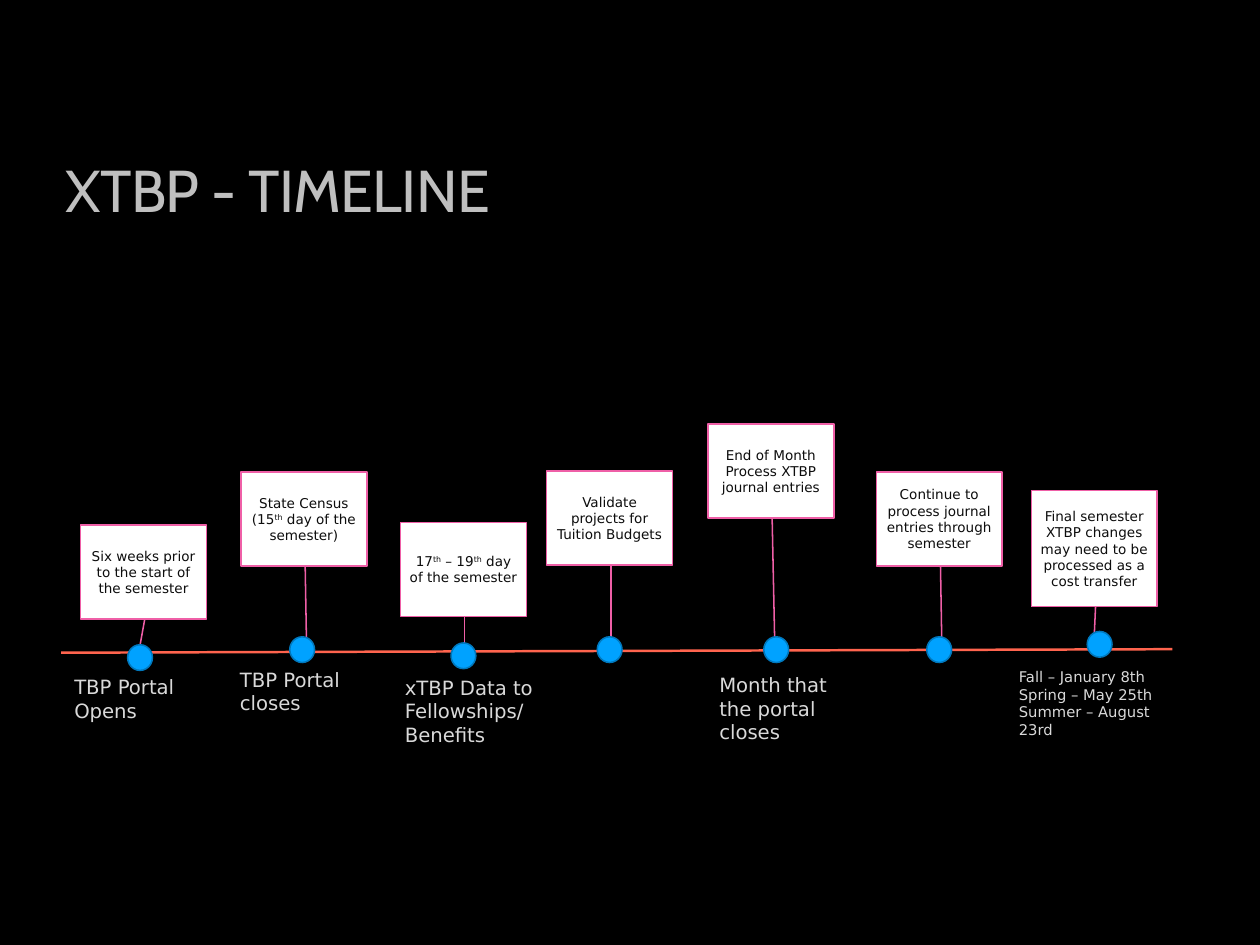
from pptx import Presentation
from pptx import util as u
from pptx.dml.color import RGBColor
from pptx.enum import shapes, text
from pptx.oxml.ns import qn
from lxml import etree

PX = 9144
BODY = "DejaVu Sans"
CARD_W, DOT_W, DOT_H = 142, 28, 29

MILESTONES = [
    dict(card=(22, 114, 106), lead=(1.0, 0.51, 1.37, 0.46), dot=(75, 249),
         note="Six weeks prior to the start of the semester",
         label=("TBP Portal Opens", 16, 5, 278, 153, 64)),
    dict(card=(203, 54, 106), lead=(1.0, 0.51, 1.78, 0.52), dot=(258, 240),
         note="State Census\n(15^th^ day of the semester)",
         label=("TBP Portal closes", 16, 192, 270, 153, 64)),
    dict(card=(383, 111, 106), lead=(1.0, 0.51, 1.28, 0.51), dot=(440, 247),
         note="17^th^ – 19^th^ day of the semester",
         label=("xTBP Data to Fellowships/ Benefits", 16, 378, 279, 192, 91)),
    dict(card=(548, 53, 106), lead=(1.0, 0.51, 1.87, 0.51), dot=(605, 240),
         note="Validate projects for Tuition Budgets", label=None),
    dict(card=(730, 0, 106), lead=(1.0, 0.51, 2.29, 0.53), dot=(793, 240),
         note="End of Month\nProcess XTBP journal entries",
         label=("Month that the portal closes", 16, 733, 276, 153, 91)),
    dict(card=(920, 54, 106), lead=(1.0, 0.51, 1.79, 0.52), dot=(977, 240),
         note="Continue to process journal entries through semester", label=None),
    dict(card=(1095, 75, 131), lead=(1.24, 0.5, 1.0, 0.51), dot=(1158, 234),
         note="Final semester XTBP changes may need to be processed as a cost transfer",
         label=("Fall – January 8th\nSpring – May 25th\nSummer – August 23rd",
                12, 1071, 270, 208, 91)),
]


def color(value):
    """Turn a hex string into a colour."""
    return RGBColor.from_string(value)


def px(*values):
    """Turn pixel lengths into EMU."""
    return [v * PX for v in values]


def style_font(r, size, name, fill):
    """Format one run."""
    r.font.size, r.font.name = u.Pt(size), name
    r.font.color.rgb = color(fill)


def add_box_shape(parent, kind, box, fill, line):
    """Add a filled and outlined preset shape."""
    s = parent.shapes.add_shape(kind, *px(*box))
    s.shadow.inherit = False
    s.fill.solid()
    s.fill.fore_color.rgb = color(fill)
    s.line.color.rgb = color(line)
    s.line.width = u.Pt(1.25)
    return s


def write_note(tf, note):
    """Write centred lines, raising the parts between carets."""
    tf.word_wrap = True
    tf.vertical_anchor = text.MSO_ANCHOR.MIDDLE
    for i, line in enumerate(note.split("\n")):
        p = tf.add_paragraph() if i else tf.paragraphs[0]
        p.alignment = text.PP_ALIGN.CENTER
        for j, part in enumerate(line.split("^")):
            r = p.add_run()
            r.text = part
            style_font(r, 11, BODY, "0D0D0D")
            if j % 2:
                r.font._element.set("baseline", "30000")


def add_label(parent, label, left, top):
    """Add the label under a milestone."""
    words, size, x, y, w, h = label
    tf = parent.shapes.add_textbox(*px(left + x, top + y, w, h)).text_frame
    tf.word_wrap = True
    tf.auto_size = text.MSO_AUTO_SIZE.SHAPE_TO_FIT_TEXT
    tf.text = words
    for p in tf.paragraphs:
        style_font(p.runs[0], size, BODY, "D9D9D9")


def add_timeline(slide, left, top):
    """Place the axis, callouts, dots and labels from the given corner."""
    group = slide.shapes.add_group_shape()
    axis = group.shapes.add_connector(
        shapes.MSO_CONNECTOR.STRAIGHT,
        *px(left, top + 258, left + 1254, top + 254))
    axis.line.color.rgb = color("FF644E")
    axis.line.width = u.Pt(2)
    etree.SubElement(axis._element.spPr, qn("a:effectLst"))
    for m in MILESTONES:
        x, y, h = m["card"]
        card = add_box_shape(group, shapes.MSO_SHAPE.LINE_CALLOUT_1,
                             (left + x, top + y, CARD_W, h), "FFFFFF", "EF5FA7")
        for i, value in enumerate(m["lead"]):
            card.adjustments[i] = value
        write_note(card.text_frame, m["note"])
        x, y = m["dot"]
        add_box_shape(group, shapes.MSO_SHAPE.OVAL,
                      (left + x, top + y, DOT_W, DOT_H), "00A2FF", "0078BD")
        if m["label"]:
            add_label(group, m["label"], left, top)


def add_title(slide, left, top, width, height):
    """Place the slide title in the given box."""
    tf = slide.shapes.add_textbox(*px(left, top, width, height)).text_frame
    tf.word_wrap = True
    tf.vertical_anchor = text.MSO_ANCHOR.MIDDLE
    tf.margin_left = tf.margin_right = 0
    tf.text = "XTBP - TIMELINE"
    p = tf.paragraphs[0]
    p.line_spacing = 0.9
    style_font(p.runs[0], 48, "Cabin", "BFBFBF")
    p.runs[0].font._element.set("spc", "-50")


def main():
    """Build and save the slide."""
    prs = Presentation()
    prs.slide_width, prs.slide_height = px(1422, 1067)
    slide = prs.slides.add_slide(prs.slide_layouts[6])
    slide.background.fill.solid()
    slide.background.fill.fore_color.rgb = color("000000")
    add_timeline(slide, 69, 479)
    add_title(slide, 74, 143, 1100, 150)
    prs.save("out.pptx")


if __name__ == "__main__":
    main()
